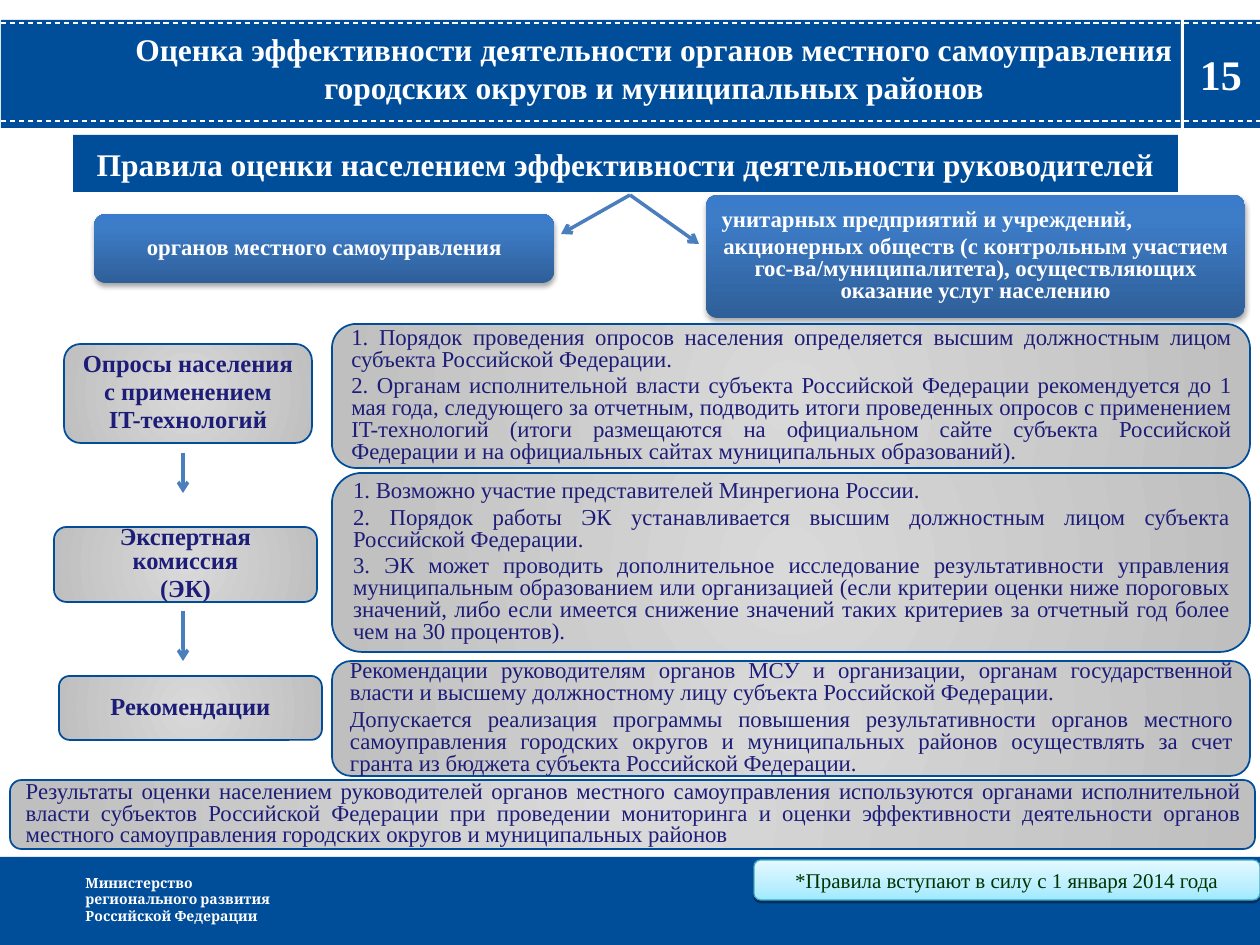
import pptx
import pptx.dml.color
import pptx.enum.dml
import pptx.enum.shapes
import pptx.enum.text
import pptx.oxml
import pptx.oxml.ns
import pptx.util
from dataclasses import dataclass

PX = 914400 / 126
SHAPE = pptx.enum.shapes.MSO_SHAPE
ALIGN = pptx.enum.text.PP_ALIGN
ANCHOR = pptx.enum.text.MSO_ANCHOR


@dataclass(frozen=True)
class Theme:
    navy: str = "004D9A"
    white: str = "FFFFFF"
    ink: str = "1D1D79"
    green: str = "003300"
    arrow: str = "4B7EBC"
    teal: str = "46AAC5"
    blue_stops: tuple = ((0, "2F5F99"), (80, "3D7CC7"), (100, "3A7CCB"))
    aqua_stops: tuple = ((0, "9EEAFF"), (35, "BBEFFF"), (100, "E4F9FF"))
    gray_stops: tuple = ((0, "D9D9D9"), (100, "BFBFBF"))
    serif: str = "Times New Roman"
    footer_font: str = "Cambria"
    number: int = 24
    title: int = 18
    label: int = 14
    body: int = 13
    note: int = 12
    ministry: int = 8


T = Theme()


def emu(*px):
    return [round(v * PX) for v in px]


def rgb(color):
    return pptx.dml.color.RGBColor.from_string(color)


def element(parent, tag, **attrs):
    child = pptx.oxml.ns.qn(tag)
    child = parent.makeelement(child, {k: str(v) for k, v in attrs.items()})
    parent.append(child)
    return child


def set_gradient(sp, stops, radial):
    sp.fill.gradient()
    grad = sp._element.spPr.find(pptx.oxml.ns.qn("a:gradFill"))
    for child in list(grad):
        grad.remove(child)
    stop_list = element(grad, "a:gsLst")
    for pos, color in stops:
        element(element(stop_list, "a:gs", pos=pos * 1000), "a:srgbClr", val=color)
    if radial:
        center = dict.fromkeys("ltrb", 50000)
        element(element(grad, "a:path", path="circle"), "a:fillToRect", **center)
    else:
        element(grad, "a:lin", ang=270 * 60000, scaled=0)


def add_box(s, x, y, w, h, fill=None, stops=None, radial=False, line=None,
            width=1, radius=None, shadow=None):
    kind = SHAPE.RECTANGLE if radius is None else SHAPE.ROUNDED_RECTANGLE
    sp = s.shapes.add_shape(kind, *emu(x, y, w, h))
    if radius is not None:
        sp.adjustments[0] = radius
    if stops:
        set_gradient(sp, stops, radial)
    else:
        sp.fill.solid()
        sp.fill.fore_color.rgb = rgb(fill)
    if line:
        sp.line.color.rgb = rgb(line)
        sp.line.width = pptx.util.Pt(width)
    else:
        sp.line.fill.background()
    sp.shadow.inherit = False
    if shadow:
        alpha, blur, dist = shadow
        effects = sp._element.spPr.find(pptx.oxml.ns.qn("a:effectLst"))
        outer = element(effects, "a:outerShdw", blurRad=round(blur * 12700),
                        dist=round(dist * 12700), dir=90 * 60000, rotWithShape=0)
        element(element(outer, "a:srgbClr", val="000000"), "a:alpha", val=alpha * 1000)
    return sp


def add_line(s, x1, y1, x2, y2, color, width, dashed=False, arrow=False):
    c = s.shapes.add_connector(pptx.enum.shapes.MSO_CONNECTOR.STRAIGHT,
                               *emu(x1, y1, x2, y2))
    c.line.color.rgb = rgb(color)
    c.line.width = pptx.util.Pt(width)
    if dashed:
        c.line.dash_style = pptx.enum.dml.MSO_LINE.DASH
    if arrow:
        element(c.line._get_or_add_ln(), "a:tailEnd", type="arrow")
    element(c._element.spPr, "a:effectLst")


def set_text(sp, *lines, size, color, bold=False, font=T.serif, align=ALIGN.CENTER,
             first_align=None, anchor=ANCHOR.MIDDLE, tight=False, inset=None):
    tf = sp.text_frame
    tf.word_wrap = True
    tf.vertical_anchor = anchor
    if inset:
        tf.margin_left, tf.margin_top, tf.margin_right, tf.margin_bottom = emu(*inset)
    for i, line in enumerate(lines):
        p = tf.add_paragraph() if i else tf.paragraphs[0]
        p.alignment = first_align if first_align and not i else align
        if tight:
            p.line_spacing = 0.8
            if i:
                p.space_before = pptx.util.Pt(size * 0.2)
        r = p.add_run()
        r.text = line
        r.font.name, r.font.size, r.font.bold = font, pptx.util.Pt(size), bold
        r.font.color.rgb = rgb(color)


def add_text(s, x, y, w, h, *lines, **fmt):
    set_text(s.shapes.add_textbox(*emu(x, y, w, h)), *lines, anchor=ANCHOR.TOP, **fmt)


def add_panel(s, x, y, w, h, *lines, **fmt):
    sp = add_box(s, x, y, w, h, stops=T.gray_stops, radial=True, line=T.navy, radius=0.167)
    set_text(sp, *lines, color=T.ink, tight=True, **fmt)


def header(s, x, y, w, h):
    add_box(s, x, y, w, h, fill=T.navy)
    for dy in (3, h - 7):
        add_line(s, x, y + dy, x + w, y + dy, T.white, 0.75, dashed=True)
    add_text(s, x + 122, y + 6, 1062, 84,
             "Оценка эффективности деятельности органов местного самоуправления "
             "городских округов и муниципальных районов",
             size=T.title, color=T.white, bold=True, inset=(8, 4, 8, 4))
    add_box(s, x + 1180, y - 1, 3, h + 1, fill=T.white)
    add_text(s, x + 1181, y + 22, 78, 63, "15", size=T.number, color=T.white, bold=True)


def rules(s, x, y, w, h):
    # Heading with two branches below
    sp = add_box(s, x, y, w, 57, fill=T.navy)
    set_text(sp, "Правила оценки населением эффективности деятельности руководителей",
             size=T.title, color=T.white, bold=True)
    branches = [
        ((21, 79, 460, 69), 0.169, ["органов местного самоуправления"], None),
        ((633, 60, 539, 123), 0.093,
         ["унитарных предприятий и учреждений,",
          "акционерных обществ (с контрольным участием гос-ва/муниципалитета), "
          "осуществляющих оказание услуг населению"], ALIGN.JUSTIFY),
    ]
    for (dx, dy, bw, bh), radius, lines, first in branches:
        sp = add_box(s, x + dx, y + dy, bw, bh, stops=T.blue_stops, radius=radius,
                     shadow=(35, 3.1, 1.8))
        set_text(sp, *lines, size=T.body, color=T.white, bold=True, tight=True,
                 first_align=first)
    for dx, dy in ((488, 99), (626, 109)):
        add_line(s, x + 557, y + 60, x + dx, y + dy, T.arrow, 2, arrow=True)


def procedure(s, x, y, w, h):
    # Each step: label box, label lines, detail top and height, detail lines
    steps = [
        ((10, 20, 248, 99), ["Опросы населения", "с применением", "IT-технологий"], (0, 144),
         ["1. Порядок проведения опросов населения определяется высшим должностным лицом "
          "субъекта Российской Федерации.",
          "2. Органам исполнительной власти субъекта Российской Федерации рекомендуется до 1 "
          "мая года, следующего за отчетным, подводить итоги проведенных опросов с применением "
          "IT-технологий (итоги размещаются на официальном сайте субъекта Российской "
          "Федерации и на официальных сайтах муниципальных образований)."]),
        ((0, 203, 263, 75), ["Экспертная комиссия", "(ЭК)"], (149, 179),
         ["1. Возможно участие представителей Минрегиона России.",
          "2. Порядок работы ЭК устанавливается высшим должностным лицом субъекта "
          "Российской Федерации.",
          "3. ЭК может проводить дополнительное исследование результативности управления "
          "муниципальным образованием или организацией (если критерии оценки ниже пороговых "
          "значений, либо если имеется снижение значений таких критериев за отчетный год более "
          "чем на 30 процентов)."]),
        ((5, 352, 263, 64), ["Рекомендации"], (337, 115),
         ["Рекомендации руководителям органов МСУ и организации, органам государственной "
          "власти и высшему должностному лицу субъекта Российской Федерации.",
          "Допускается реализация программы повышения результативности органов местного "
          "самоуправления городских округов и муниципальных районов осуществлять за счет "
          "гранта из бюджета субъекта Российской Федерации."]),
    ]
    for (dx, dy, lw, lh), label, (top, height), detail in steps:
        add_panel(s, x + dx, y + dy, lw, lh, *label, size=T.label, bold=True)
        add_panel(s, x + 278, y + top, w - 278, height, *detail, size=T.body,
                  align=ALIGN.JUSTIFY)
    for top, bottom in ((129, 169), (287, 337)):
        add_line(s, x + 129, y + top, x + 129, y + bottom, T.arrow, 2, arrow=True)


def results(s, x, y, w, h):
    add_panel(s, x, y, w, h,
              "Результаты оценки населением руководителей органов местного самоуправления "
              "используются органами исполнительной власти субъектов Российской Федерации при "
              "проведении мониторинга и оценки эффективности деятельности органов местного "
              "самоуправления городских округов и муниципальных районов",
              size=T.body, align=ALIGN.JUSTIFY)


def footer(s, x, y, w, h):
    add_box(s, x, y, w, h, fill=T.navy)
    add_text(s, x + 73, y + 11, 321, 63,
             "Министерство", "регионального развития", "Российской Федерации",
             size=T.ministry, color=T.white, bold=True, font=T.footer_font, align=ALIGN.LEFT)
    # Effective date note
    sp = add_box(s, x + 754, y + 3, 506, 40, stops=T.aqua_stops, line=T.teal, width=0.75,
                 radius=0.167, shadow=(38, 0, 1.6))
    set_text(sp, "*Правила вступают в силу с 1 января 2014 года", size=T.note, color=T.green)


def main():
    prs = pptx.Presentation()
    prs.slide_width, prs.slide_height = emu(1260, 945)
    s = prs.slides.add_slide(prs.slide_layouts[6])
    header(s, 1, 20, 1259, 108)
    rules(s, 73, 135, 1105, 183)
    procedure(s, 54, 324, 1196, 452)
    results(s, 10, 780, 1245, 69)
    footer(s, 0, 857, 1260, 88)
    prs.save("out.pptx")


if __name__ == "__main__":
    main()
